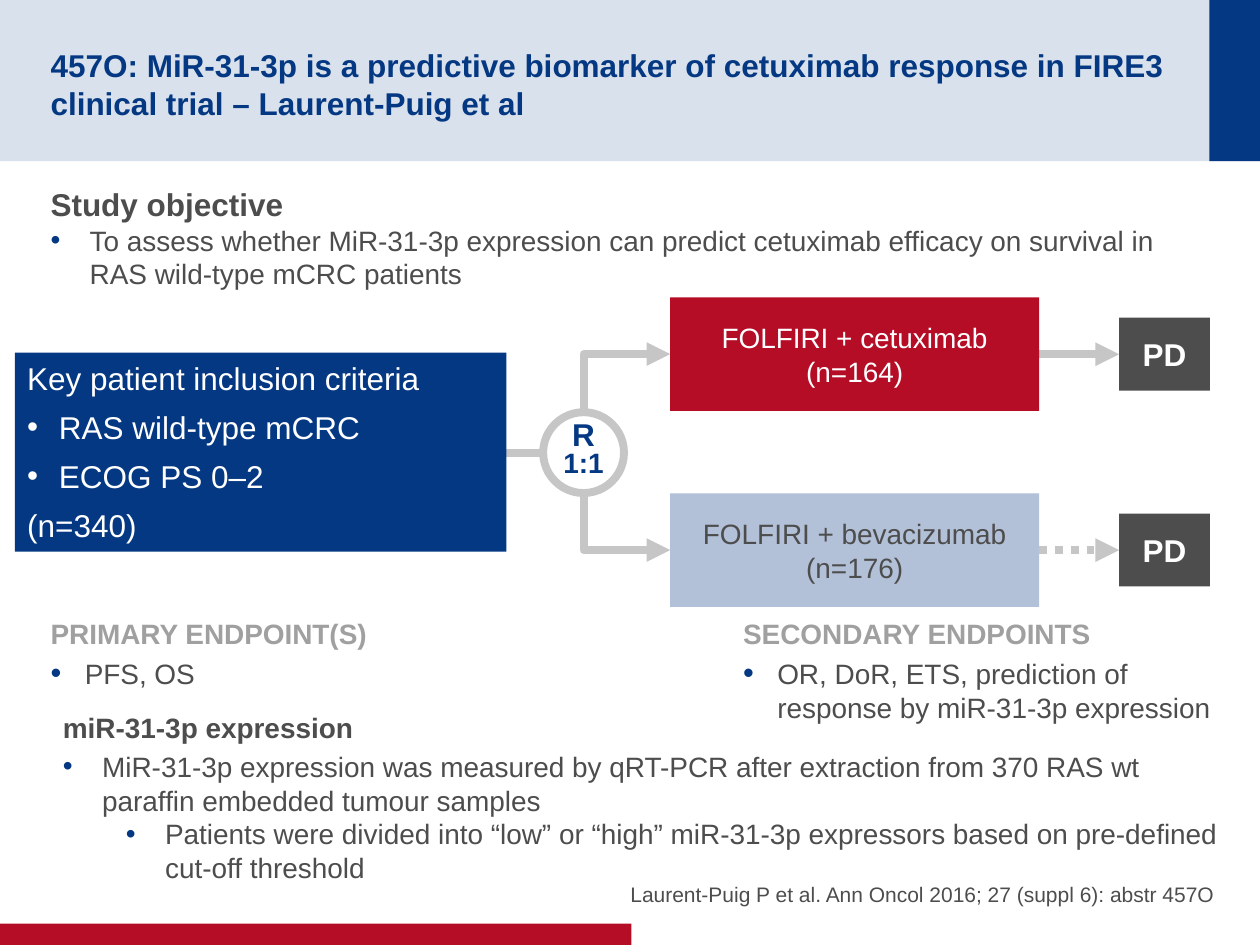
from dataclasses import dataclass
from typing import Optional

import lxml.etree
import pptx
import pptx.dml.color
import pptx.enum.dml
import pptx.enum.shapes
import pptx.enum.text
import pptx.oxml.ns
import pptx.util

Cm = pptx.util.Cm
Pt = pptx.util.Pt
RGBColor = pptx.dml.color.RGBColor
SHAPE = pptx.enum.shapes.MSO_SHAPE
CONNECTOR = pptx.enum.shapes.MSO_CONNECTOR
ALIGN = pptx.enum.text.PP_ALIGN
ANCHOR = pptx.enum.text.MSO_ANCHOR
qn = pptx.oxml.ns.qn

NAVY = RGBColor(0x04, 0x38, 0x82)
RED = RGBColor(0xB6, 0x0D, 0x27)
PALE_BLUE = RGBColor(0xB2, 0xC0, 0xD8)
DARK = RGBColor(0x4D, 0x4D, 0x4D)
GREY = RGBColor(0xA0, 0xA0, 0xA0)
LINE_GREY = RGBColor(0xC6, 0xC6, 0xC6)
WHITE = RGBColor(0xFF, 0xFF, 0xFF)
FONT = "Arial"


@dataclass(frozen=True)
class Box:
    x: float
    y: float
    w: float
    h: float

    def lengths(self) -> list:
        return [Cm(v) for v in (self.x, self.y, self.w, self.h)]


@dataclass(frozen=True)
class Arm:
    lines: tuple
    mid: float
    fill: RGBColor
    color: RGBColor
    dash: Optional[pptx.enum.dml.MSO_LINE] = None


ARMS = (
    Arm(("FOLFIRI + cetuximab", "(n=164)"), 7.14, RED, WHITE),
    Arm(("FOLFIRI + bevacizumab", "(n=176)"), 11.09, PALE_BLUE, DARK,
        pptx.enum.dml.MSO_LINE.ROUND_DOT),
)
ARM_X, ARM_W, ARM_H = 13.51, 7.44, 2.29
PD_X, PD_W, PD_H = 22.56, 1.83, 1.47
CRITERIA = Box(0.3, 7.11, 9.91, 4.01)
CIRCLE = Box(10.95, 8.31, 1.63, 1.63)


def add_child(parent, tag: str, **attrs: str):
    return lxml.etree.SubElement(parent, qn(tag), attrs)


def write(tf, text: str, *, size=16, color=DARK, bold=False, align=ALIGN.LEFT,
          before=0, after=0, spacing=None, indent=0, hang=0, level=0,
          bullet_color=None, bullet_size=100) -> None:
    """Add one paragraph, bulleted when a bullet colour is given."""
    first = tf.paragraphs[0]
    p = tf.add_paragraph() if first.runs else first
    p.alignment, p.level = align, level
    p.space_before, p.space_after = Pt(before), Pt(after)
    if spacing:
        p.line_spacing = Pt(spacing)
    if bullet_color is not None:
        pPr = p._p.get_or_add_pPr()
        pPr.set("marL", str(Cm(indent)))
        pPr.set("indent", str(-Cm(hang)))
        add_child(add_child(pPr, "a:buClr"), "a:srgbClr", val=str(bullet_color))
        add_child(pPr, "a:buSzPct", val=str(bullet_size * 1000))
        add_child(pPr, "a:buFont", typeface=FONT)
        add_child(pPr, "a:buChar", char="•")
    r = p.add_run()
    r.text = text
    r.font.name, r.font.size, r.font.bold = FONT, Pt(size), bold
    r.font.color.rgb = color


def set_frame(tf, anchor, insets, wrap=True):
    """Set wrapping, anchor and left, top, right, bottom insets in cm."""
    tf.word_wrap, tf.vertical_anchor = wrap, anchor
    (tf.margin_left, tf.margin_top,
     tf.margin_right, tf.margin_bottom) = [Cm(v) for v in insets]
    return tf


def add_text(s, box: Box, anchor=ANCHOR.TOP, insets=(0.25, 0.13, 0.25, 0.13)):
    return set_frame(s.shapes.add_textbox(*box.lengths()).text_frame, anchor, insets)


def add_block(s, box: Box, fill: RGBColor, kind=SHAPE.RECTANGLE):
    sp = s.shapes.add_shape(kind, *box.lengths())
    sp.shadow.inherit = False
    sp.fill.solid()
    sp.fill.fore_color.rgb = fill
    sp.line.fill.background()
    set_frame(sp.text_frame, ANCHOR.MIDDLE, (0.25, 0, 0.25, 0))
    return sp


def add_line(s, x1: float, y1: float, x2: float, y2: float, *,
             kind=CONNECTOR.STRAIGHT, arrow=True, dash=None):
    c = s.shapes.add_connector(kind, Cm(x1), Cm(y1), Cm(x2), Cm(y2))
    c.line.color.rgb, c.line.width = LINE_GREY, Pt(4.5)
    if dash is not None:
        c.line.dash_style = dash
    if arrow:
        add_child(c.line._get_or_add_ln(), "a:tailEnd", type="triangle")
    add_child(c._element.spPr, "a:effectLst")
    return c


def add_elbow(s, x1: float, y1: float, x2: float, y2: float) -> None:
    """Draw an arrow that leaves vertically and turns once to the right."""
    w, h = abs(y2 - y1), x2 - x1
    left, top = (x1 + x2 - w) / 2, (y1 + y2 - h) / 2
    c = add_line(s, left, top, left + w, top + h, kind=CONNECTOR.ELBOW)
    spPr = c._element.spPr
    spPr.find(qn("a:prstGeom")).set("prst", "bentConnector2")
    xfrm = spPr.find(qn("a:xfrm"))
    upward = y2 < y1
    xfrm.set("rot", str((90 if upward else 270) * 60000))
    xfrm.set("flipH", "1")
    if upward:
        xfrm.set("flipV", "1")


def draw_frame(s) -> None:
    header = add_block(s, Box(0, 0, 25.4, 3.25), NAVY)
    color = header._element.spPr.find(qn("a:solidFill")).find(qn("a:srgbClr"))
    add_child(color, "a:alpha", val="15000")
    add_block(s, Box(24.38, 0, 1.02, 3.25), NAVY)
    add_block(s, Box(0, 18.62, 12.73, 0.43), RED)
    tf = add_text(s, Box(1.02, 0.51, 22.89, 2.24), ANCHOR.MIDDLE, (0, 0.13, 0, 0))
    write(tf, "457O: MiR-31-3p is a predictive biomarker of cetuximab response in "
          "FIRE3 clinical trial – Laurent-Puig et al", size=18, color=NAVY, bold=True)
    tf = add_text(s, Box(12.17, 16.92, 12.32, 1.35), ANCHOR.BOTTOM, (0, 0, 0, 0))
    write(tf, "Laurent-Puig P et al. Ann Oncol 2016; 27 (suppl 6): abstr 457O",
          size=12, align=ALIGN.RIGHT, after=4)


def draw_arm(s, arm: Arm) -> None:
    mid_x, mid_y = CIRCLE.x + CIRCLE.w / 2, CIRCLE.y + CIRCLE.h / 2
    edge = mid_y + CIRCLE.h / 2 * (1 if arm.mid > mid_y else -1)
    add_elbow(s, mid_x, edge, ARM_X, arm.mid)
    add_line(s, ARM_X + ARM_W, arm.mid, PD_X, arm.mid, dash=arm.dash)
    sp = add_block(s, Box(ARM_X, arm.mid - ARM_H / 2, ARM_W, ARM_H), arm.fill)
    for line in arm.lines:
        write(sp.text_frame, line, color=arm.color, align=ALIGN.CENTER)
    sp = add_block(s, Box(PD_X, arm.mid - PD_H / 2, PD_W, PD_H), DARK)
    write(sp.text_frame, "PD", size=18, color=WHITE, bold=True, align=ALIGN.CENTER)


def draw_trial(s) -> None:
    for arm in ARMS:
        draw_arm(s, arm)
    mid_y = CIRCLE.y + CIRCLE.h / 2
    add_line(s, CRITERIA.x + CRITERIA.w, mid_y, CIRCLE.x, mid_y, arrow=False)
    sp = add_block(s, CIRCLE, WHITE, SHAPE.OVAL)
    sp.line.color.rgb, sp.line.width = LINE_GREY, Pt(4.5)
    tf = set_frame(sp.text_frame, ANCHOR.MIDDLE, (0.25, 0.13, 0.25, 0.13), wrap=False)
    for text, size in (("R", 18), ("1:1", 16)):
        write(tf, text, size=size, color=NAVY, bold=True, align=ALIGN.CENTER, spacing=15)
    sp = add_block(s, CRITERIA, NAVY, SHAPE.ROUNDED_RECTANGLE)
    sp.adjustments[0] = 0
    tf = set_frame(sp.text_frame, ANCHOR.TOP, (0.25, 0.13, 0.25, 0.13))
    for text, bullet in (("Key patient inclusion criteria", None),
                         ("RAS wild-type mCRC", WHITE),
                         ("ECOG PS 0–2", WHITE), ("(n=340)", None)):
        write(tf, text, size=18, color=WHITE, after=6.3, indent=0.64, hang=0.64,
              bullet_color=bullet)


def draw_endpoints(s, box: Box, inset: float, heading: str, text: str) -> None:
    tf = add_text(s, box, insets=(inset, 0.13, inset, 0.13))
    write(tf, heading, color=GREY, bold=True, after=4)
    write(tf, text, after=4, indent=0.69, hang=0.69, bullet_color=NAVY, bullet_size=110)


def draw_notes(s) -> None:
    bullet = dict(hang=0.79, bullet_color=NAVY)
    tf = add_text(s, Box(1.02, 3.61, 23.34, 2.39), insets=(0, 0.13, 0.25, 0.13))
    write(tf, "Study objective", size=18, bold=True)
    write(tf, "To assess whether MiR-31-3p expression can predict cetuximab efficacy on "
          "survival in RAS wild-type mCRC patients", indent=0.79, **bullet)
    draw_endpoints(s, Box(1.02, 12.29, 12.98, 3.43), 0, "PRIMARY ENDPOINT(S)", "PFS, OS")
    draw_endpoints(s, Box(14.73, 12.29, 10.06, 2.54), 0.25, "SECONDARY ENDPOINTS",
                   "OR, DoR, ETS, prediction of response by miR-31-3p expression")
    tf = add_text(s, Box(1.02, 14.2, 24.03, 3.78))
    write(tf, "miR-31-3p expression", bold=True, before=12, after=3)
    write(tf, "MiR-31-3p expression was measured by qRT-PCR after extraction from 370 "
          "RAS wt paraffin embedded tumour samples", indent=0.79, **bullet)
    write(tf, "Patients were divided into “low” or “high” miR-31-3p expressors based on "
          "pre-defined cut-off threshold", level=1, indent=2.06, **bullet)


def main() -> None:
    prs = pptx.Presentation()
    prs.slide_width, prs.slide_height = Cm(25.4), Cm(19.05)
    s = prs.slides.add_slide(prs.slide_layouts[6])
    draw_frame(s)
    draw_trial(s)
    draw_notes(s)
    prs.save("out.pptx")


if __name__ == "__main__":
    main()
